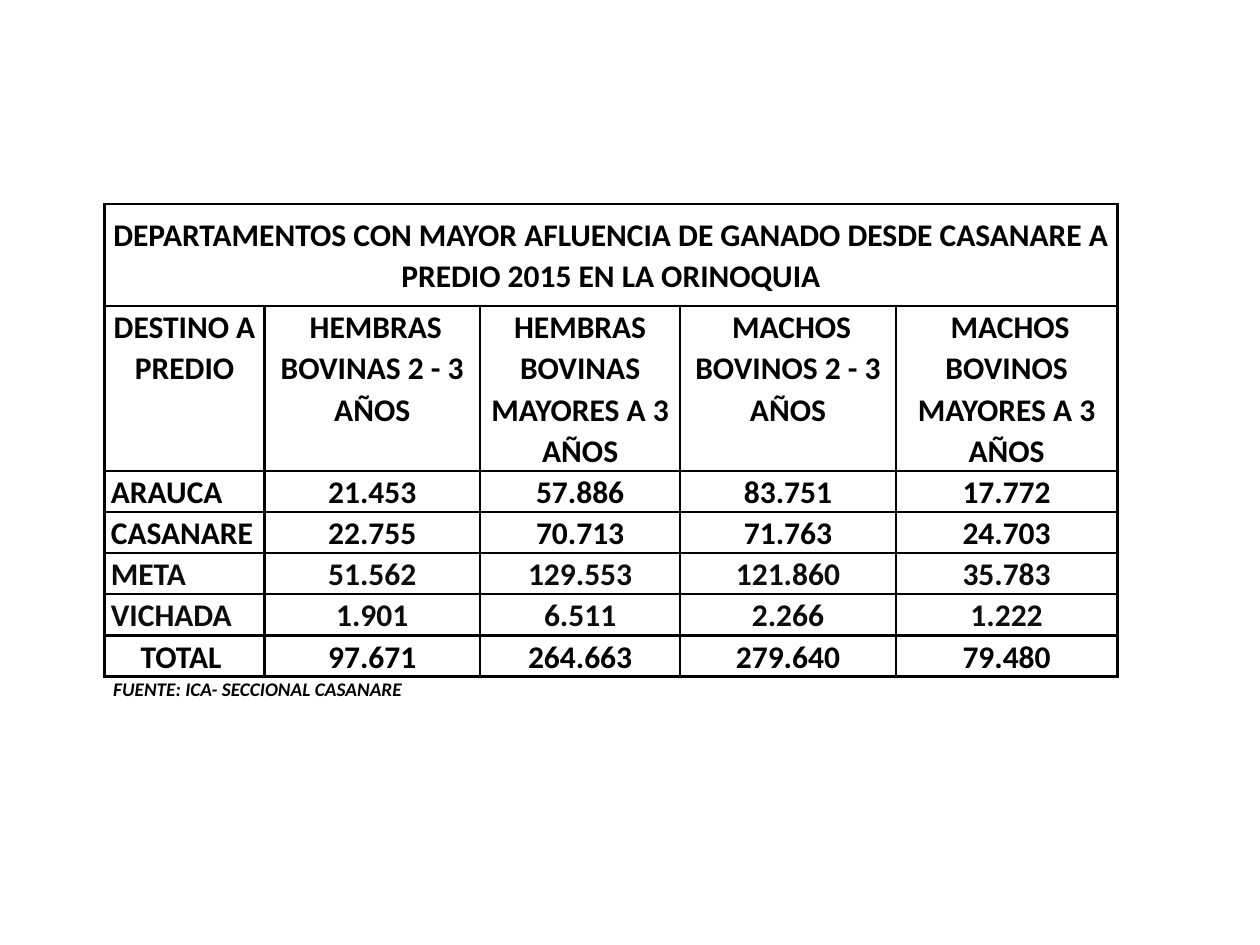
import pptx
import pptx.dml.color
import pptx.enum.text
import pptx.oxml
import pptx.oxml.ns
import pptx.util
from dataclasses import dataclass

Inches = pptx.util.Inches
ALIGN = pptx.enum.text.PP_ALIGN
ANCHOR = pptx.enum.text.MSO_ANCHOR


@dataclass(frozen=True)
class Theme:
    font: str = "Calibri"
    ink: str = "000000"
    soft_ink: str = "0D0D0D"
    table_size: int = 18
    source_size: int = 11
    border: float = 1.5
    line_spacing: float = 1.07


THEME = Theme()
WIDTH, HEIGHT = 10, 7.5
COLUMNS = [1.27, 1.71, 1.59, 1.71, 1.76]
TITLE_ROW, HEADER_ROW, DATA_ROW = 0.81, 1.3, 0.32

TITLE = ("DEPARTAMENTOS CON MAYOR AFLUENCIA DE GANADO DESDE CASANARE A "
         "PREDIO 2015 EN LA ORINOQUIA")
HEADERS = ["DESTINO A PREDIO", " HEMBRAS BOVINAS 2 - 3 AÑOS",
           "HEMBRAS BOVINAS MAYORES A 3 AÑOS", " MACHOS BOVINOS 2 - 3 AÑOS",
           " MACHOS BOVINOS MAYORES A 3 AÑOS"]
DEPARTMENTS = [
    ["ARAUCA", "21.453", "57.886", "83.751", "17.772"],
    ["CASANARE", "22.755", "70.713", "71.763", "24.703"],
    ["META", "51.562", "129.553", "121.860", "35.783"],
    ["VICHADA", "1.901", "6.511", "2.266", "1.222"],
]
TOTALS = ["TOTAL ", "97.671", "264.663", "279.640", "79.480"]
SOFT_ROWS = {"META", "VICHADA"}


def set_all(obj, values):
    for name, value in values.items():
        setattr(obj, name, value)


def write(p, text, size, color, italic=False):
    r = p.add_run()
    r.text = text
    set_all(r.font, {"name": THEME.font, "size": pptx.util.Pt(size),
                     "bold": True, "italic": italic})
    r.font.color.rgb = pptx.dml.color.RGBColor.from_string(color)


def add_borders(cell):
    """Draw the four sides; they must precede the fill in the cell properties."""
    tc_pr = cell._tc.get_or_add_tcPr()
    ns = pptx.oxml.ns.nsdecls("a")
    width = pptx.util.Pt(THEME.border)
    for i, side in enumerate(("lnL", "lnR", "lnT", "lnB")):
        tc_pr.insert(i, pptx.oxml.parse_xml(
            f'<a:{side} {ns} w="{width}"><a:solidFill>'
            f'<a:srgbClr val="{THEME.ink}"/></a:solidFill></a:{side}>'))


def fill_cell(cell, text, anchor, align=ALIGN.CENTER, color=THEME.ink):
    set_all(cell, {"margin_left": Inches(0.05), "margin_right": Inches(0.05),
                   "margin_top": 0, "margin_bottom": 0,
                   "vertical_anchor": anchor})
    p = cell.text_frame.paragraphs[0]
    set_all(p, {"alignment": align, "line_spacing": THEME.line_spacing})
    if text:
        write(p, text, THEME.table_size, color)


def add_cattle_table(s, left, top):
    rows = [[TITLE, "", "", "", ""], HEADERS, *DEPARTMENTS, TOTALS]
    heights = [TITLE_ROW, HEADER_ROW] + [DATA_ROW] * (len(rows) - 2)
    table = s.shapes.add_table(
        len(rows), len(COLUMNS), Inches(left), Inches(top),
        Inches(sum(COLUMNS)), Inches(sum(heights))).table
    set_all(table, {"first_row": False, "horz_banding": False})
    for column, width in zip(table.columns, COLUMNS):
        column.width = Inches(width)
    for row, height in zip(table.rows, heights):
        row.height = Inches(height)

    anchors = [ANCHOR.MIDDLE, ANCHOR.TOP] + [ANCHOR.BOTTOM] * (len(rows) - 2)
    for i, (values, anchor) in enumerate(zip(rows, anchors)):
        color = THEME.soft_ink if values[0] in SOFT_ROWS else THEME.ink
        for j, text in enumerate(values):
            cell = table.cell(i, j)
            is_name = j == 0 and values in DEPARTMENTS
            fill_cell(cell, text, anchor,
                      ALIGN.LEFT if is_name else ALIGN.CENTER, color)
            cell.fill.background()
            add_borders(cell)
    table.cell(0, 0).merge(table.cell(0, len(COLUMNS) - 1))


def add_source(s, left, top, width, height, text):
    tf = s.shapes.add_textbox(*map(Inches, (left, top, width, height))).text_frame
    set_all(tf, {"word_wrap": False,
                 "auto_size": pptx.enum.text.MSO_AUTO_SIZE.SHAPE_TO_FIT_TEXT})
    write(tf.paragraphs[0], text, THEME.source_size, THEME.ink, italic=True)


def main():
    prs = pptx.Presentation()
    set_all(prs, {"slide_width": Inches(WIDTH), "slide_height": Inches(HEIGHT)})
    s = prs.slides.add_slide(prs.slide_layouts[6])
    add_cattle_table(s, 0.83, 1.62)
    add_source(s, WIDTH * 0.08, HEIGHT * 0.71, 2.52, 0.29,
               "FUENTE: ICA- SECCIONAL CASANARE")
    prs.save("out.pptx")


if __name__ == "__main__":
    main()
